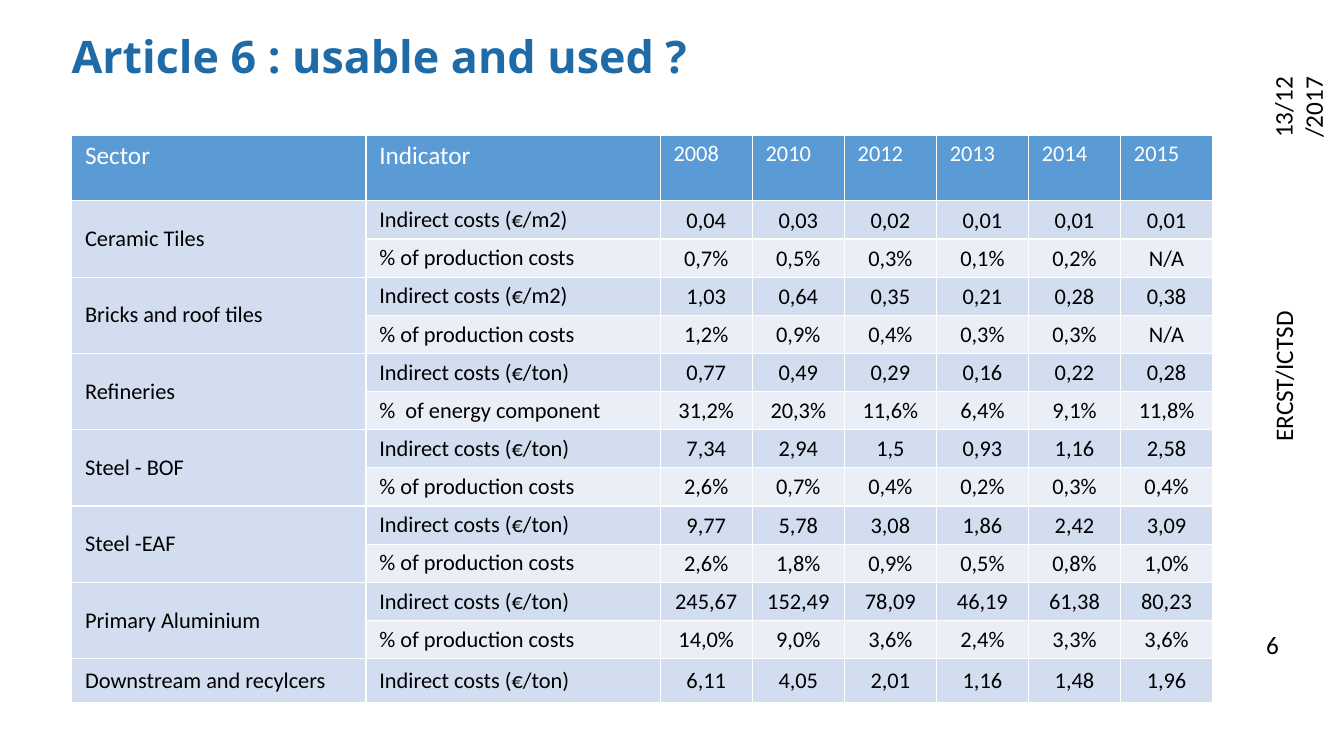
"""Build a slide with a table of indirect costs by sector and year."""
from pptx import Presentation
from pptx.dml.color import RGBColor
from pptx.enum import shapes, text
from pptx.util import Pt

TITLE = "Article 6 : usable and used ?"
DATE, FOOTER, NUMBER = "13/12/2017", "ERCST/ICTSD", "6"
HEADER = ["Sector", "Indicator", "2008", "2010", "2012", "2013", "2014", "2015"]
M2, TON = "Indirect costs (€/m2)", "Indirect costs (€/ton)"
SHARE, ENERGY = "% of production costs", "%  of energy component"
SECTORS = [
    ("Ceramic Tiles", [
        (M2, "0,04 0,03 0,02 0,01 0,01 0,01"),
        (SHARE, "0,7% 0,5% 0,3% 0,1% 0,2% N/A")]),
    ("Bricks and roof tiles", [
        (M2, "1,03 0,64 0,35 0,21 0,28 0,38"),
        (SHARE, "1,2% 0,9% 0,4% 0,3% 0,3% N/A")]),
    ("Refineries", [
        (TON, "0,77 0,49 0,29 0,16 0,22 0,28"),
        (ENERGY, "31,2% 20,3% 11,6% 6,4% 9,1% 11,8%")]),
    ("Steel - BOF", [
        (TON, "7,34 2,94 1,5 0,93 1,16 2,58"),
        (SHARE, "2,6% 0,7% 0,4% 0,2% 0,3% 0,4%")]),
    ("Steel -EAF", [
        (TON, "9,77 5,78 3,08 1,86 2,42 3,09"),
        (SHARE, "2,6% 1,8% 0,9% 0,5% 0,8% 1,0%")]),
    ("Primary Aluminium", [
        (TON, "245,67 152,49 78,09 46,19 61,38 80,23"),
        (SHARE, "14,0% 9,0% 3,6% 2,4% 3,3% 3,6%")]),
    ("Downstream and recylcers", [
        (TON, "6,11 4,05 2,01 1,16 1,48 1,96")]),
]
THEME = dict(title="1F6BA7", ink="000000", white="FFFFFF", header="5B9BD5",
             odd="D2DEEF", even="EAEFF7", heading_font="Open Sans", font="Calibri",
             title_size=32, large=18, body=16)
LEFT, CENTER = text.PP_ALIGN.LEFT, text.PP_ALIGN.CENTER
TOP, MIDDLE = text.MSO_ANCHOR.TOP, text.MSO_ANCHOR.MIDDLE
COLS = [210.2] * 2 + [65.77] * 6
ROWS = [46.8] + [27.26] * 12 + [31.5]


def apply(obj, **values):
    for name, value in values.items():
        setattr(obj, name, value)


def write(tf, words, size, color="ink", font="font", bold=False, align=LEFT):
    p = tf.paragraphs[0]
    p.alignment = align
    r = p.add_run()
    r.text = words
    apply(r.font, size=Pt(THEME[size]), name=THEME[font], bold=bold)
    r.font.color.rgb = RGBColor.from_string(THEME[color])
    return p


def add_label(s, box, words, size="large", rotation=0, **style):
    sp = s.shapes.add_textbox(*map(Pt, box))
    sp.rotation = rotation
    apply(sp.text_frame, word_wrap=True, vertical_anchor=TOP)
    return write(sp.text_frame, words, size, **style)


def add_number(s):
    sp = s.shapes.add_shape(shapes.MSO_SHAPE.DOUBLE_BRACKET, *map(Pt, (895.7, 445, 57.6, 31)))
    sp.adjustments[0] = 0.18
    sp.shadow.inherit = False
    sp.fill.background()
    sp.line.fill.background()
    apply(sp.text_frame, vertical_anchor=MIDDLE, margin_left=Pt(7.2), margin_right=Pt(7.2))
    write(sp.text_frame, NUMBER, "large")


def fill_cell(cell, words, fill, size="body", color="ink", anchor=MIDDLE, value=False):
    side, top, bottom = (1.2, 0.6, 0) if value else (9.6, 3.6, 3.6)
    apply(cell, margin_left=Pt(side), margin_right=Pt(side), margin_top=Pt(top),
          margin_bottom=Pt(bottom), vertical_anchor=anchor)
    cell.fill.solid()
    cell.fill.fore_color.rgb = RGBColor.from_string(THEME[fill])
    if words:
        write(cell.text_frame, words, size, color, align=CENTER if value else LEFT)


def add_cost_table(s):
    frame = s.shapes.add_table(len(ROWS), len(COLS), *map(Pt, (51.2, 96.7, sum(COLS), sum(ROWS))))
    table = frame.table
    for col, width in zip(table.columns, COLS):
        col.width = Pt(width)
    for row, height in zip(table.rows, ROWS):
        row.height = Pt(height)
    for c, words in enumerate(HEADER):
        fill_cell(table.cell(0, c), words, "header", "large" if c < 2 else "body", "white", TOP)
    row = 1
    for sector, indicators in SECTORS:
        first = row
        for i, (indicator, values) in enumerate(indicators):
            fill = "even" if i else "odd"
            fill_cell(table.cell(row, 0), "" if i else sector, "odd")
            fill_cell(table.cell(row, 1), indicator, fill)
            for c, value in enumerate(values.split(), 2):
                fill_cell(table.cell(row, c), value, fill, value=True)
            row += 1
        if len(indicators) > 1:
            table.cell(first, 0).merge(table.cell(row - 1, 0))


def main():
    prs = Presentation()
    apply(prs, slide_width=Pt(960), slide_height=Pt(540))
    s = prs.slides.add_slide(prs.slide_layouts[6])
    title = add_label(s, (44, 21, 804, 50.4), TITLE, "title_size", color="title",
                      font="heading_font", bold=True)
    title.line_spacing = 0.9
    add_label(s, (889.2, 54.7, 63.4, 38.2), DATE, rotation=270)
    add_label(s, (758.2, 249.8, 326.2, 38.2), FOOTER, rotation=270, align=CENTER)
    add_number(s)
    add_cost_table(s)
    prs.save("out.pptx")


if __name__ == "__main__":
    main()
